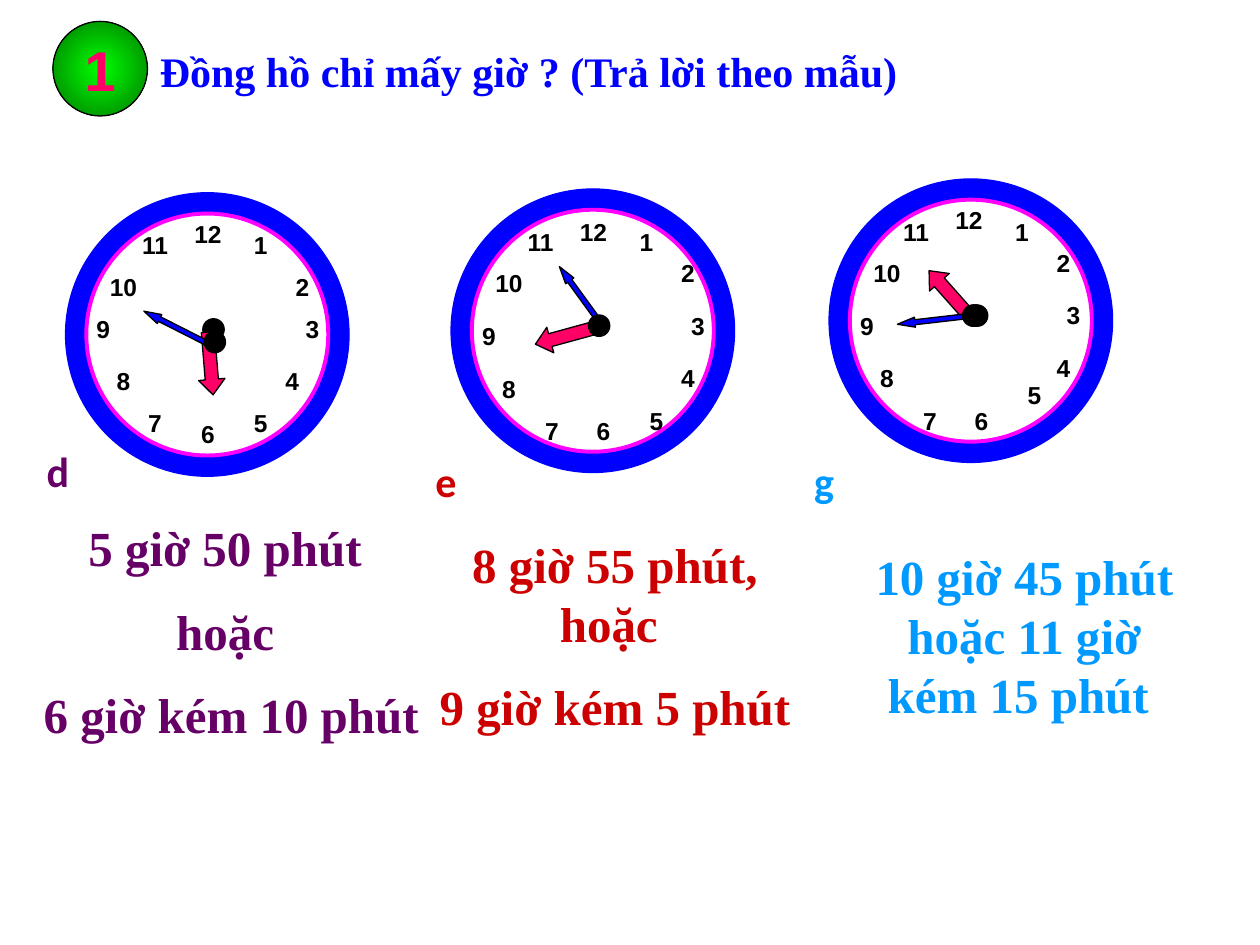
from dataclasses import dataclass

import lxml.etree
import pptx
import pptx.dml.color
import pptx.enum.shapes
import pptx.enum.text
import pptx.oxml.ns
import pptx.util
from pptx.util import Inches

SHAPE = pptx.enum.shapes.MSO_SHAPE
ALIGN = pptx.enum.text.PP_ALIGN
Point = tuple[float, float]

BLACK, WHITE, BLUE, MAGENTA, PINK = "000000", "FFFFFF", "0000FF", "FF00FF", "FF0066"
FACE, DIAL, RIM, DOT = 2.25, 1.92, 0.165, 0.17
NUMERAL_W, NUMERAL_H = 0.42, 0.34


@dataclass
class Hand:
    left: float
    top: float
    angle: float


@dataclass
class Clock:
    left: float
    top: float
    numerals: list[Point]  # top left corners, from 1 to 12
    hour: Hand
    minute: Hand
    dots_below: list[Point]
    dots_above: list[Point]


@dataclass
class Label:
    text: str
    box: tuple[float, float, float, float]
    size: float
    font: str
    color: str
    align: ALIGN = ALIGN.CENTER


CLOCKS = [
    Clock(0.52, 1.53,
          [(1.86, 1.78), (2.19, 2.11), (2.27, 2.44), (2.11, 2.86), (1.86, 3.19), (1.44, 3.28),
           (1.02, 3.19), (0.77, 2.86), (0.61, 2.44), (0.77, 2.11), (1.02, 1.78), (1.44, 1.69)],
          Hand(1.42, 2.78, 85.3), Hand(1.11, 2.56, 206.9),
          [(1.61, 2.53)], [(1.62, 2.63)]),
    Clock(3.58, 1.5,
          [(4.92, 1.75), (5.25, 2), (5.33, 2.42), (5.25, 2.83), (5, 3.17), (4.58, 3.25),
           (4.17, 3.25), (3.83, 2.92), (3.67, 2.5), (3.83, 2.08), (4.08, 1.75), (4.5, 1.67)],
          Hand(4.24, 2.56, 164.7), Hand(4.32, 2.31, 234),
          [], [(4.67, 2.5)]),
    Clock(6.58, 1.42,
          [(7.9, 1.67), (8.23, 1.92), (8.31, 2.33), (8.23, 2.75), (8, 2.97), (7.58, 3.17),
           (7.17, 3.17), (6.83, 2.83), (6.67, 2.42), (6.83, 2), (7.06, 1.67), (7.48, 1.58)],
          Hand(7.29, 2.23, 228.4), Hand(7.12, 2.5, 173.4),
          [(7.67, 2.42)], [(7.64, 2.42), (7.65, 2.42)]),
]

PURPLE, RED, SKY = "660066", "CC0000", "0099FF"
SERIF = "Times New Roman"
LABELS = [
    Label("d", (0.25, 3.49, 0.42, 0.5), 24, "Calibri", PURPLE),
    Label("5 giờ 50 phút \nhoặc \n6 giờ kém 10 phút", (0.17, 4.06, 3.33, 1.99), 28, SERIF, PURPLE),
    Label("e", (3.33, 3.57, 0.42, 0.5), 24, "Calibri", RED),
    Label("8 giờ 55 phút, hoặc \n9 giờ kém 5 phút", (3.34, 4.19, 3.08, 1.75), 28, SERIF, RED),
    Label("g", (6.33, 3.57, 0.42, 0.5), 24, "Calibri", SKY),
    Label("10 giờ 45 phút hoặc 11 giờ kém 15 phút ", (6.83, 4.29, 2.6, 1.51), 28, SERIF, SKY),
    Label("Đồng hồ chỉ mấy giờ ? (Trả lời theo mẫu)", (1.17, 0.31, 6.33, 0.5), 24, SERIF, BLUE,
          ALIGN.LEFT),
]


def rgb(value: str) -> pptx.dml.color.RGBColor:
    return pptx.dml.color.RGBColor.from_string(value)


def add_shape(shapes, kind: SHAPE, box: tuple, fill: str, line: str = BLACK, width: float = 0.75):
    sp = shapes.add_shape(kind, *map(Inches, box))
    sp.shadow.inherit = False
    sp.fill.solid()
    sp.fill.fore_color.rgb = rgb(fill)
    sp.line.color.rgb = rgb(line)
    sp.line.width = pptx.util.Pt(width)
    return sp


def write(tf, text: str, size: float, font: str, color: str, align: ALIGN) -> None:
    """Fill a text frame with bold text, half a line apart between paragraphs."""
    tf.text = text
    for i, p in enumerate(tf.paragraphs):
        p.alignment = align
        if i:
            p.space_before = pptx.util.Pt(size / 2)
        for r in p.runs:
            r.font.size = pptx.util.Pt(size)
            r.font.name = font
            r.font.bold = True
            r.font.color.rgb = rgb(color)


def add_label(shapes, label: Label) -> None:
    tf = shapes.add_textbox(*map(Inches, label.box)).text_frame
    tf.word_wrap = True
    tf.auto_size = pptx.enum.text.MSO_AUTO_SIZE.SHAPE_TO_FIT_TEXT
    write(tf, label.text, label.size, label.font, label.color, label.align)


def add_hand(shapes, hand: Hand, length: float, thickness: float, head: float, fill: str) -> None:
    sp = add_shape(shapes, SHAPE.RIGHT_ARROW, (hand.left, hand.top, length, thickness), fill)
    sp.adjustments[0] = 0.5
    sp.adjustments[1] = head
    sp.rotation = hand.angle


def add_dots(shapes, dots: list[Point]) -> None:
    for left, top in dots:
        add_shape(shapes, SHAPE.OVAL, (left, top, DOT, DOT), BLACK)


def add_clock(s, clock: Clock) -> None:
    shapes = s.shapes.add_group_shape().shapes
    add_shape(shapes, SHAPE.OVAL, (clock.left, clock.top, FACE, FACE), BLUE, BLUE)
    add_shape(shapes, SHAPE.OVAL, (clock.left + RIM, clock.top + RIM, DIAL, DIAL),
              WHITE, MAGENTA, 2.25)
    add_dots(shapes, clock.dots_below)
    for number, (left, top) in enumerate(clock.numerals, 1):
        add_label(shapes, Label(str(number), (left, top, NUMERAL_W, NUMERAL_H), 14, "Arial", BLACK))
    add_hand(shapes, clock.hour, 0.5, 0.21, 0.585, PINK)
    add_hand(shapes, clock.minute, 0.58, 0.08, 1.75, BLUE)
    add_dots(shapes, clock.dots_above)


def add_badge(s) -> None:
    """Add the numbered ball with a gradient running from its centre."""
    sp = add_shape(s.shapes, SHAPE.OVAL, (0.42, 0.17, 0.75, 0.75), "00FF00")
    sp.fill.gradient()
    for stop, color in zip(sp.fill.gradient_stops, ("00FF00", "007600")):
        stop.color.rgb = rgb(color)
    qn = pptx.oxml.ns.qn
    grad = sp.element.spPr.find(qn("a:gradFill"))
    grad.remove(grad.find(qn("a:lin")))
    circle = lxml.etree.SubElement(grad, qn("a:path"), {"path": "circle"})
    lxml.etree.SubElement(circle, qn("a:fillToRect"), dict.fromkeys("ltrb", "50000"))
    tf = sp.text_frame
    tf.word_wrap = False
    tf.vertical_anchor = pptx.enum.text.MSO_ANCHOR.MIDDLE
    write(tf, "1", 32, "Arial", PINK, ALIGN.CENTER)


def main() -> None:
    prs = pptx.Presentation()
    prs.slide_width, prs.slide_height = Inches(10), Inches(7.5)
    s = prs.slides.add_slide(prs.slide_layouts[6])
    add_badge(s)
    for clock in CLOCKS:
        add_clock(s, clock)
    for label in LABELS:
        add_label(s.shapes, label)
    prs.save("out.pptx")


if __name__ == "__main__":
    main()
